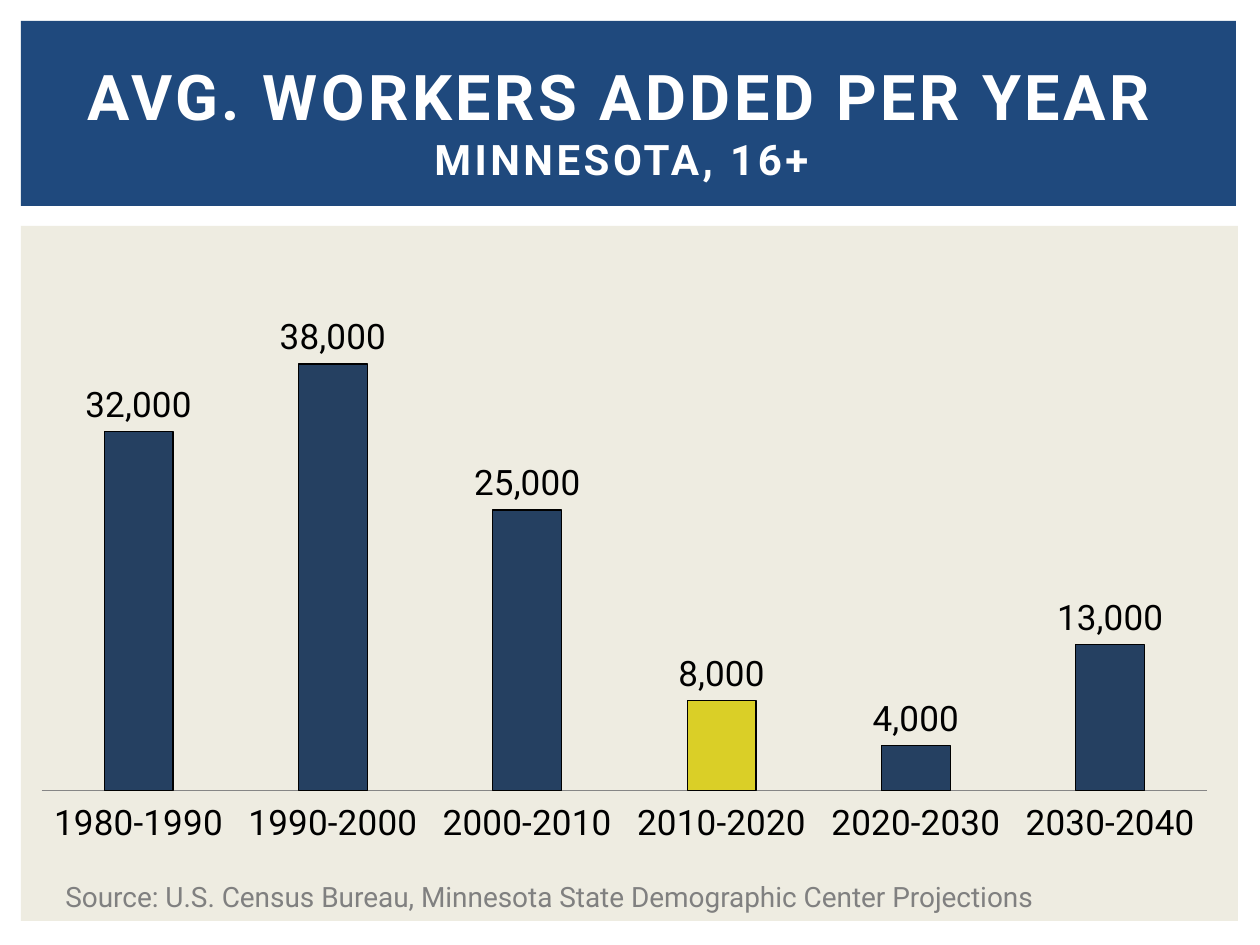
from lxml.etree import SubElement
from pptx import Presentation
from pptx.chart.data import CategoryChartData
from pptx.dml.color import RGBColor
from pptx.enum.chart import XL_CHART_TYPE as ChartType
from pptx.enum.chart import XL_LABEL_POSITION as LabelPosition
from pptx.enum.chart import XL_TICK_LABEL_POSITION as TickLabels
from pptx.enum.chart import XL_TICK_MARK as TickMark
from pptx.enum.shapes import MSO_SHAPE as Preset
from pptx.enum.text import MSO_ANCHOR as Anchor
from pptx.enum.text import PP_ALIGN as Align
from pptx.oxml.ns import qn
from pptx.util import Emu, Pt

PX_PER_INCH = 126
FONT = "Roboto"
COLORS = {
    "banner": "1F497D", "panel": "EEECE1", "bar": "254061", "highlight": "DACF27",
    "title": "FFFFFF", "chart_text": "000000", "axis": "868686", "source": "808080",
}
WORKERS_ADDED = {
    "1980-1990": 32000, "1990-2000": 38000, "2000-2010": 25000,
    "2010-2020": 8000, "2020-2030": 4000, "2030-2040": 13000,
}
HIGHLIGHTED = "2010-2020"
PLOT_AREA = {"x": 0.017, "y": 0.186, "w": 0.966, "h": 0.692}


def px(length):
    return Emu(round(length * 914400 / PX_PER_INCH))


def color(name):
    return RGBColor.from_string(COLORS[name])


def set_values(target, values):
    for name, value in values.items():
        setattr(target, name, value)


def format_font(font, size, color_name, bold=False):
    set_values(font, {"name": FONT, "size": Pt(size), "bold": bold})
    font.color.rgb = color(color_name)


def fill_solid(item, color_name):
    item.fill.solid()
    item.fill.fore_color.rgb = color(color_name)


def add_panel(slide, box, color_name):
    panel = slide.shapes.add_shape(Preset.RECTANGLE, *map(px, box))
    panel.shadow.inherit = False
    fill_solid(panel, color_name)
    panel.line.fill.background()


def place_title(slide, box, lines):
    """Fill the banner and set the title placeholder in front of it."""
    left, top, width, height = box
    add_panel(slide, box, "banner")
    title = slide.shapes.title
    title.element.getparent().append(title.element)
    set_values(title, {"left": px(left + 2), "top": px(top + 21),
                       "width": px(width - 18), "height": px(height - 28)})
    title.text_frame.vertical_anchor = Anchor.MIDDLE
    paragraph = title.text_frame.paragraphs[0]
    paragraph.alignment = Align.CENTER
    for index, (text, size) in enumerate(lines):
        if index:
            paragraph.add_line_break()
        run = paragraph.add_run()
        run.text = text
        format_font(run.font, size, "title", bold=True)
        run.font._element.set("spc", "200")


def fix_plot_area(chart):
    """Give the inner plot area its share of the chart."""
    plot_area = chart._chartSpace.chart.plotArea
    layout = plot_area.find(qn("c:layout"))
    if layout is None:
        layout = SubElement(plot_area, qn("c:layout"))
        plot_area.insert(0, layout)
    manual = SubElement(layout, qn("c:manualLayout"))
    settings = {"layoutTarget": "inner", "xMode": "edge", "yMode": "edge", **PLOT_AREA}
    for name, value in settings.items():
        SubElement(manual, qn(f"c:{name}")).set("val", str(value))


def format_axes(chart):
    set_values(chart.category_axis, {"major_tick_mark": TickMark.NONE,
                                     "minor_tick_mark": TickMark.NONE,
                                     "tick_label_position": TickLabels.LOW})
    line = chart.category_axis.format.line
    line.color.rgb = color("axis")
    line.width = Pt(0.75)
    set_values(chart.value_axis, {"visible": False, "has_major_gridlines": False,
                                  "minimum_scale": 0, "maximum_scale": 40000})


def format_bars(plot):
    set_values(plot, {"gap_width": 182, "overlap": -30,
                      "vary_by_categories": False, "has_data_labels": True})
    set_values(plot.data_labels, {"show_value": True, "number_format": "#,##0",
                                  "number_format_is_linked": False,
                                  "position": LabelPosition.OUTSIDE_END})
    format_font(plot.data_labels.font, 20, "chart_text")
    series = plot.series[0]
    highlighted = series.points[list(WORKERS_ADDED).index(HIGHLIGHTED)]
    for item, name in ((series, "bar"), (highlighted, "highlight")):
        fill_solid(item.format, name)
        item.format.line.color.rgb = color("chart_text")
        item.format.line.width = Pt(0.75)


def add_workers_chart(slide, box):
    data = CategoryChartData(number_format="#,##0")
    data.categories = list(WORKERS_ADDED)
    data.add_series("Series 1", list(WORKERS_ADDED.values()))
    chart = slide.shapes.add_chart(ChartType.COLUMN_CLUSTERED, *map(px, box), data).chart
    set_values(chart, {"has_legend": False, "has_title": False})
    format_font(chart.font, 20, "chart_text")
    fix_plot_area(chart)
    format_axes(chart)
    format_bars(chart.plots[0])


def add_source(slide, box, text):
    frame = slide.shapes.add_textbox(*map(px, box)).text_frame
    frame.word_wrap = True
    run = frame.paragraphs[0].add_run()
    run.text = text
    format_font(run.font, 16, "source")


def place_chart_panel(slide, box):
    left, top, width, height = box
    add_panel(slide, box, "panel")
    add_workers_chart(slide, (left, top - 5, width - 10, height - 46))
    add_source(slide, (left + 32, top + 647, width - 122, 47),
               "Source: U.S. Census Bureau, Minnesota State Demographic Center Projections")


def main():
    presentation = Presentation()
    set_values(presentation, {"slide_width": px(1260), "slide_height": px(945)})
    slide = presentation.slides.add_slide(presentation.slide_layouts.get_by_name("Title Only"))
    place_chart_panel(slide, (21, 226, 1217, 695))
    place_title(slide, (21, 21, 1215, 185),
                [("AVG. WORKERS ADDED PER YEAR", 36), ("MINNESOTA, 16+", 24)])
    presentation.save("out.pptx")


if __name__ == "__main__":
    main()
